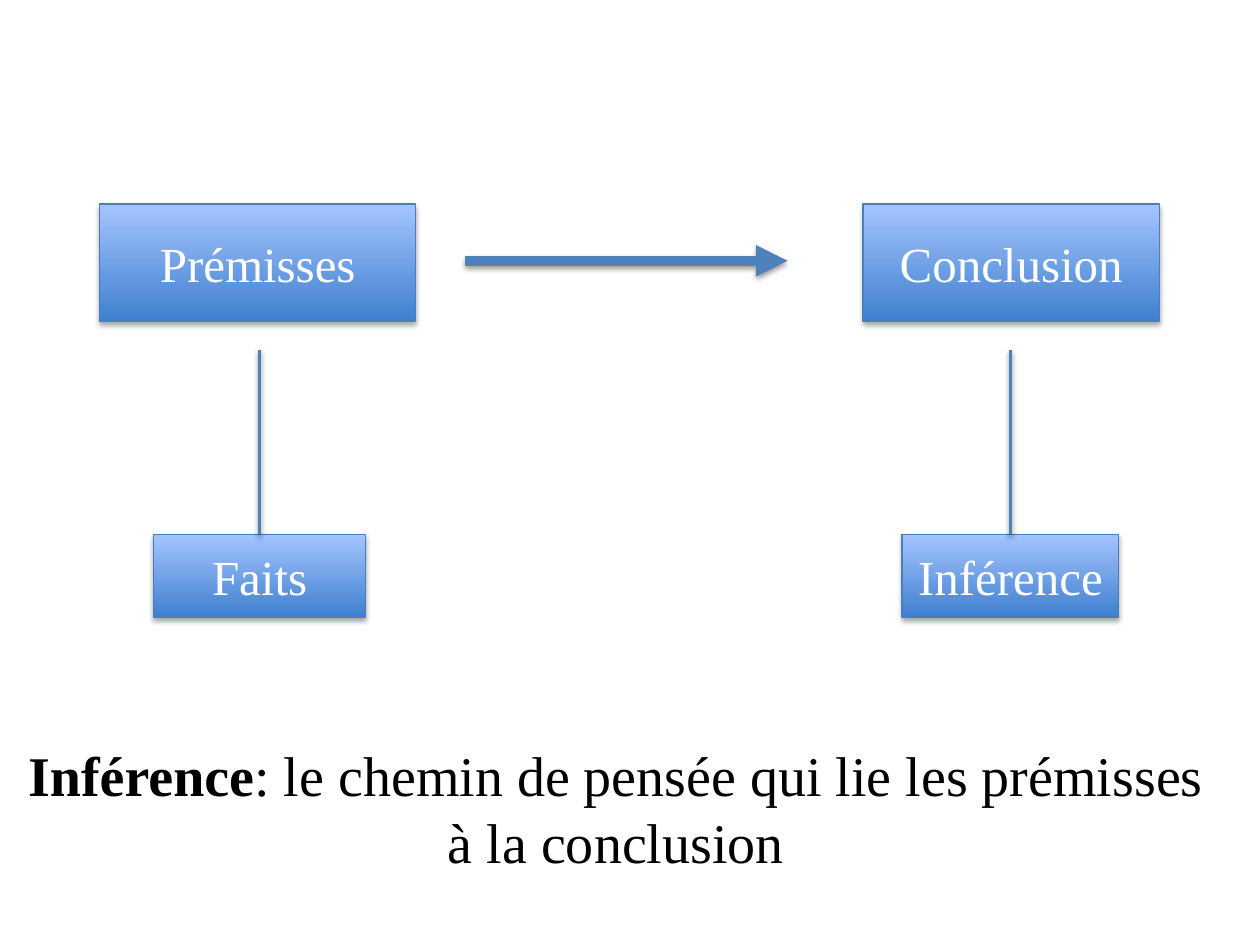
from lxml import etree
from pptx import Presentation
from pptx.dml.color import RGBColor
from pptx.enum.shapes import MSO_CONNECTOR, MSO_SHAPE
from pptx.enum.text import MSO_ANCHOR, MSO_AUTO_SIZE, PP_ALIGN
from pptx.oxml.ns import qn
from pptx.util import Inches, Pt

RECTANGLE = MSO_SHAPE.RECTANGLE
STRAIGHT = MSO_CONNECTOR.STRAIGHT
CENTER = PP_ALIGN.CENTER
MIDDLE = MSO_ANCHOR.MIDDLE
GROW = MSO_AUTO_SIZE.SHAPE_TO_FIT_TEXT

FONT = "Times New Roman"
BOX_DARK = RGBColor(0x3F, 0x80, 0xCE)
BOX_LIGHT = RGBColor(0xA4, 0xC4, 0xFF)
BOX_EDGE = RGBColor(0x4B, 0x7E, 0xBC)
LINK_BLUE = RGBColor(0x4F, 0x81, 0xBD)
WHITE = RGBColor(0xFF, 0xFF, 0xFF)
BLACK = RGBColor(0x00, 0x00, 0x00)


def add_shadow(shape, distance, opacity):
    """Give a shape or connector a soft black shadow straight below it."""
    effects = etree.SubElement(shape._element.spPr, qn("a:effectLst"))
    shadow = etree.SubElement(
        effects, qn("a:outerShdw"), blurRad=str(Pt(3.1)),
        dist=str(Pt(distance)), dir="5400000", rotWithShape="0")
    color = etree.SubElement(shadow, qn("a:srgbClr"), val=str(BLACK))
    etree.SubElement(color, qn("a:alpha"), val=str(opacity * 1000))


def add_link(start_x, start_y, end_x, end_y, width):
    link = slide.shapes.add_connector(
        STRAIGHT, Inches(start_x), Inches(start_y), Inches(end_x), Inches(end_y))
    link.line.color.rgb = LINK_BLUE
    link.line.width = Pt(width)
    add_shadow(link, 1.6, 38)
    return link


presentation = Presentation()
presentation.slide_width = Inches(10)
presentation.slide_height = Inches(7.5)
slide = presentation.slides.add_slide(presentation.slide_layouts[6])

# Boxes
boxes = {}
for label, left, top, width, height in [
    ("Prémisses", 0.79, 1.62, 2.51, 0.93),
    ("Conclusion", 6.85, 1.62, 2.35, 0.93),
    ("Faits", 1.22, 4.24, 1.68, 0.66),
    ("Inférence", 7.16, 4.24, 1.72, 0.66),
]:
    box = slide.shapes.add_shape(
        RECTANGLE, Inches(left), Inches(top), Inches(width), Inches(height))
    box.fill.gradient()
    box.fill.gradient_angle = 90
    for stop, color, position in zip(
            box.fill.gradient_stops, (BOX_DARK, BOX_LIGHT), (0, 1)):
        stop.color.rgb = color
        stop.position = position
    box.line.color.rgb = BOX_EDGE
    box.line.width = Pt(0.75)
    add_shadow(box, 1.8, 35)
    box.text_frame.text = label
    box.text_frame.vertical_anchor = MIDDLE
    paragraph = box.text_frame.paragraphs[0]
    paragraph.alignment = CENTER
    font = paragraph.runs[0].font
    font.name, font.size, font.color.rgb = FONT, Pt(28), WHITE
    boxes[label] = box

# Arrow from premises to conclusion
arrow = add_link(3.69, 2.07, 6.25, 2.07, 6)
arrow_line = arrow._element.spPr.find(qn("a:ln"))
etree.SubElement(arrow_line, qn("a:tailEnd"), type="triangle")

# Vertical links down to the lower boxes
for label, center_x in [("Faits", 2.06), ("Inférence", 8.02)]:
    link = add_link(center_x, 2.78, center_x, 4.24, 2)
    link.end_connect(boxes[label], 0)

# Definition
definition = slide.shapes.add_textbox(
    Inches(0), Inches(5.83), Inches(9.78), Inches(1.18))
definition.text_frame.word_wrap = True
definition.text_frame.auto_size = GROW
paragraph = definition.text_frame.paragraphs[0]
paragraph.alignment = CENTER
for text, bold in [
    ("Inférence", True),
    (": le chemin de pensée qui lie les prémisses à la conclusion", False),
]:
    run = paragraph.add_run()
    run.text = text
    run.font.name, run.font.size, run.font.bold = FONT, Pt(32), bold
    run.font.color.rgb = BLACK

presentation.save("out.pptx")
